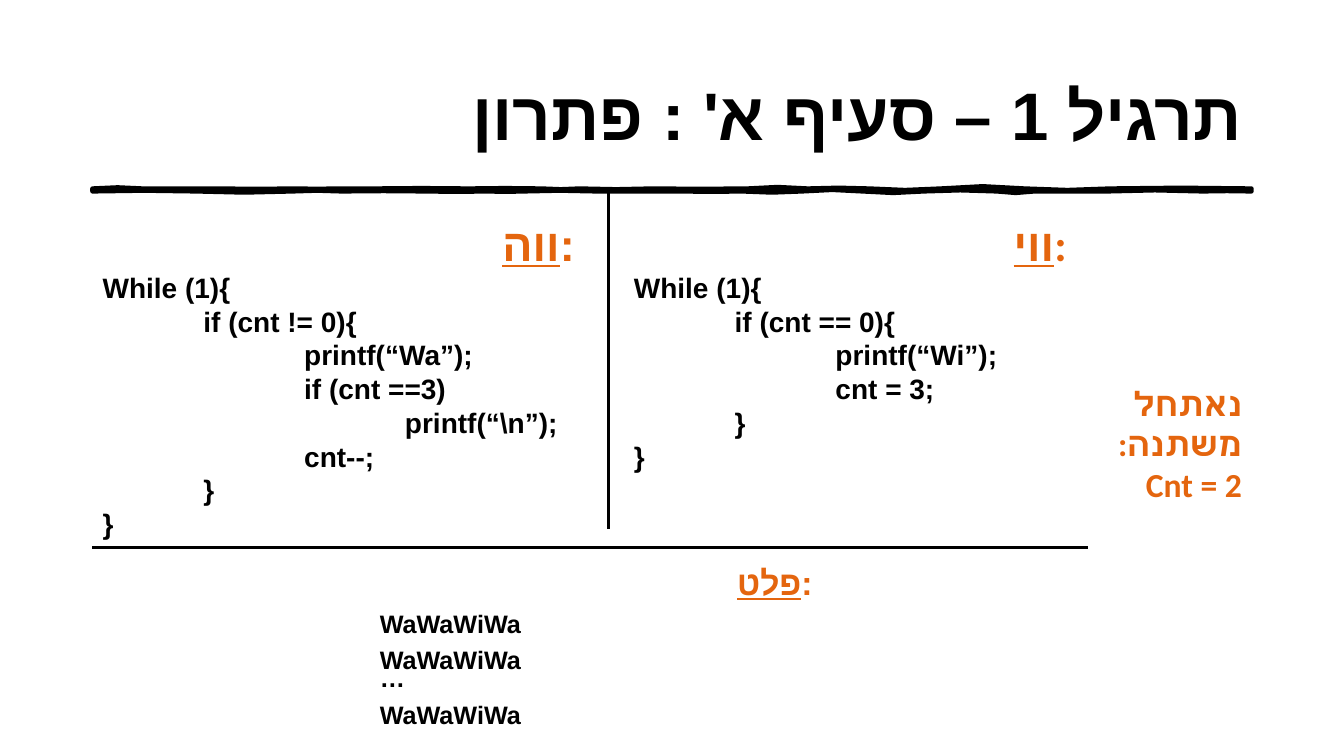
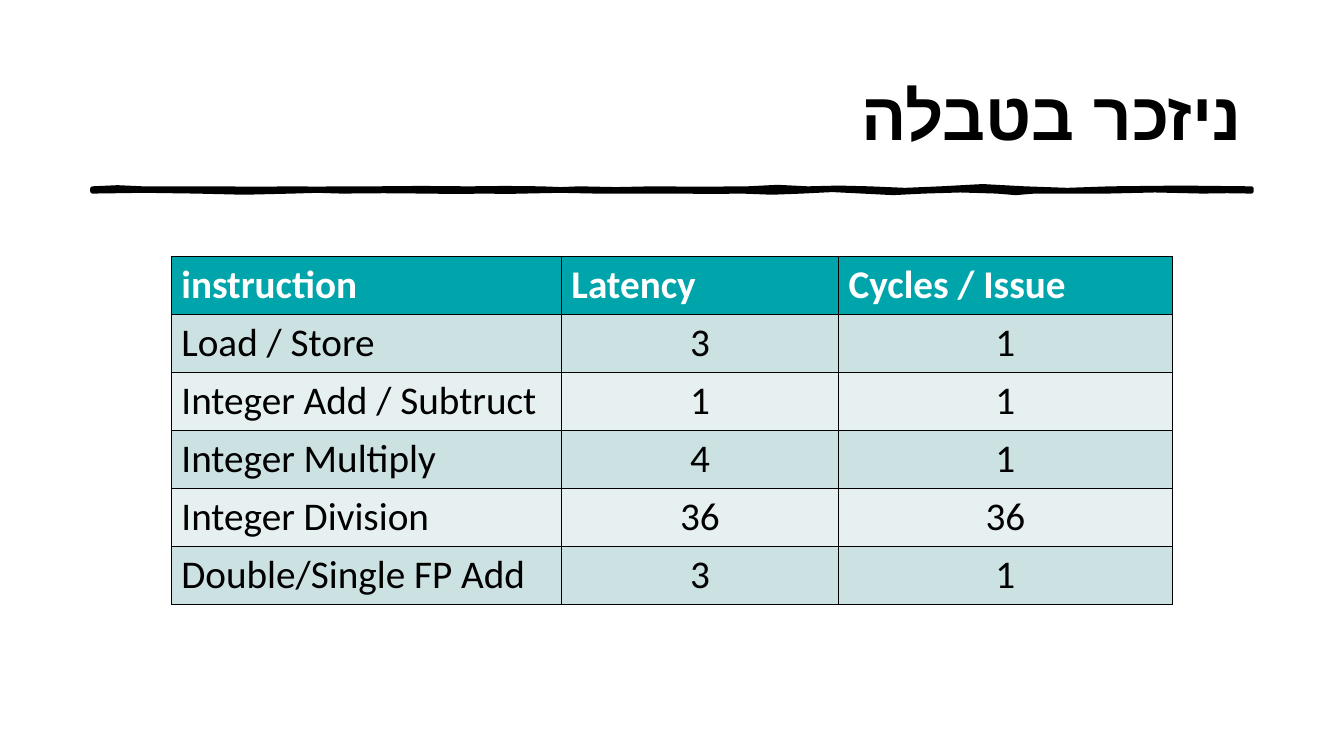
from dataclasses import dataclass
from typing import Any, Iterator

import lxml.etree
import pptx
import pptx.dml.color
import pptx.enum.shapes
import pptx.enum.text
import pptx.oxml.ns
import pptx.util

Pt = pptx.util.Pt
RGBColor = pptx.dml.color.RGBColor
Align = pptx.enum.text.PP_ALIGN
Anchor = pptx.enum.text.MSO_ANCHOR
qn = pptx.oxml.ns.qn

BLACK = RGBColor(0x00, 0x00, 0x00)
WHITE = RGBColor(0xFF, 0xFF, 0xFF)
ORANGE = RGBColor(0xE4, 0x65, 0x0E)
TEAL = RGBColor(0x00, 0xA5, 0xAB)
BANDS = (RGBColor(0xCC, 0xE1, 0xE2), RGBColor(0xE7, 0xF0, 0xF1))

ARIAL = "Arial"
CALIBRI = "Calibri"

TAB = 72
RIPPLE = 0.72
CURVE_STEPS = 2
RULE_LEFT = 66
RULE_TOP = 134.6
RULE_BOTTOM = 136.8
ROW_HEIGHT = 41.4


@dataclass(frozen=True)
class Wave:
    end: float
    first: int
    second: int


@dataclass(frozen=True)
class Box:
    left: float
    top: float
    width: float
    height: float


@dataclass(frozen=True)
class CodePanel:
    box: Box
    heading: str
    heading_font: str
    lines: tuple[tuple[int, str], ...]


@dataclass(frozen=True)
class Divider:
    start: tuple[float, float]
    end: tuple[float, float]


TOP_WAVES = tuple(Wave(*values) for values in (
    (102, -2, -1), (153, 1, -1), (213, 1, 0), (240, 0, 1),
    (267, -1, 1), (335, -1, 0), (387, 0, -1), (414, 1, 1),
    (466, -1, 3), (534, -3, 4), (577, -4, 0), (621, 0, -2),
    (672, 2, 2), (732, -2, -4), (793, 4, 0), (894, 0, -2),
))
BOTTOM_WAVES = tuple(Wave(*values) for values in (
    (859, -1, 0), (791, 0, -3), (739, 3, -3), (712, 3, 1),
    (660, -1, -2), (616, 2, 2), (573, -2, -2), (530, 2, 1),
    (486, -1, 2), (426, -2, 2), (374, -2, 0), (348, 0, 1),
    (304, -1, 2), (244, -2, 1), (209, -1, -1), (140, 1, 2),
    (66, -2, 0),
))

TITLE_BOX = Box(66.2, 28.8, 828, 104.4)
OUTPUT_BOX = Box(264.2, 413.3, 323.3, 113)
NOTE_BOX = Box(771.8, 270, 122.4, 94.3)

CODE_PANELS = (
    CodePanel(Box(66.2, 151.2, 351.4, 239.8), "ווה", ARIAL, (
        (0, "While (1){"),
        (1, "if (cnt != 0){"),
        (2, "printf(“Wa”);"),
        (2, "if (cnt ==3)"),
        (3, "printf(“\\n”);"),
        (2, "cnt--;"),
        (1, "}"),
        (0, "}"),
    )),
    CodePanel(Box(445.7, 151.2, 323.3, 191.5), "ווי", CALIBRI, (
        (0, "While (1){"),
        (1, "if (cnt == 0){"),
        (2, "printf(“Wi”);"),
        (2, "cnt = 3;"),
        (1, "}"),
        (0, "}"),
    )),
)
DIVIDERS = (
    Divider((434.6, 134), (434.6, 378)),
    Divider((65.9, 391), (777.2, 391)),
)
OUTPUT_LINES = (("WaWaWiWa", 13), ("WaWaWiWa", 13), ("…", 0), ("WaWaWiWa", 13))

COLUMN_WIDTHS = (278.6, 198, 238.3)
LATENCY_ROWS = (
    ("instruction", "Latency", "Cycles / Issue"),
    ("Load / Store", "3", "1"),
    ("Integer Add / Subtruct", "1", "1"),
    ("Integer Multiply", "4", "1"),
    ("Integer Division", "36", "36"),
    ("Double/Single FP Add", "3", "1"),
)


def write(frame: Any, text: str, *, size: float, font: str = CALIBRI,
          hebrew_font: str = ARIAL, color: RGBColor = BLACK, bold: bool = True,
          underline: bool = False, suffix: str = "", align: Any = Align.LEFT,
          rtl: bool = False, indent: float = 0,
          line_spacing: float | None = None, space_before: float = 0) -> None:
    paragraph = frame.paragraphs[0]
    if paragraph.runs:
        paragraph = frame.add_paragraph()
    paragraph.alignment = align
    paragraph.space_before = Pt(space_before)
    if line_spacing is not None:
        paragraph.line_spacing = Pt(line_spacing)
    properties = paragraph._p.get_or_add_pPr()
    if indent:
        properties.set("marL", str(Pt(indent)))
    if rtl:
        properties.set("rtl", "1")
    for part, underlined in ((text, underline), (suffix, False)):
        if not part:
            continue
        run = paragraph.add_run()
        run.text = part
        run.font.size = Pt(size)
        run.font.bold = bold
        run.font.underline = underlined
        run.font.color.rgb = color
        run.font.name = font
        complex_font = lxml.etree.SubElement(run._r.get_or_add_rPr(), qn("a:cs"))
        complex_font.set("typeface", hebrew_font)


def add_text_frame(slide: Any, box: Box, anchor: Any = Anchor.TOP) -> Any:
    shape = slide.shapes.add_textbox(
        Pt(box.left), Pt(box.top), Pt(box.width), Pt(box.height))
    frame = shape.text_frame
    frame.word_wrap = True
    frame.vertical_anchor = anchor
    return frame


def wave_points(start: float, base: float,
                waves: tuple[Wave, ...]) -> Iterator[tuple[int, int]]:
    for wave in waves:
        for step in range(1, CURVE_STEPS + 1):
            t = step / CURVE_STEPS
            bend = 3 * t * (1 - t) * ((1 - t) * wave.first + t * wave.second)
            yield Pt(start + (wave.end - start) * t), Pt(base + RIPPLE * bend)
        start = wave.end


def add_title_rule(slide: Any) -> None:
    builder = slide.shapes.build_freeform(Pt(RULE_LEFT), Pt(RULE_TOP))
    right = TOP_WAVES[-1].end
    builder.add_line_segments([
        *wave_points(RULE_LEFT, RULE_TOP, TOP_WAVES),
        (Pt(right), Pt(RULE_BOTTOM)),
        *wave_points(right, RULE_BOTTOM, BOTTOM_WAVES),
    ], close=True)
    shape = builder.convert_to_shape()
    shape.shadow.inherit = False
    shape.fill.solid()
    shape.fill.fore_color.rgb = BLACK
    shape.line.color.rgb = BLACK
    shape.line.width = Pt(3)
    lxml.etree.SubElement(shape.line._get_or_add_ln(), qn("a:round"))


def add_titled_slide(presentation: Any, title: str) -> Any:
    slide = presentation.slides.add_slide(presentation.slide_layouts[6])
    add_title_rule(slide)
    write(add_text_frame(slide, TITLE_BOX, Anchor.MIDDLE), title,
          size=48, align=Align.RIGHT, rtl=True)
    return slide


def add_code_panel(slide: Any, panel: CodePanel) -> None:
    frame = add_text_frame(slide, panel.box)
    write(frame, panel.heading, suffix=":", size=32, font=panel.heading_font,
          color=ORANGE, underline=True, align=Align.RIGHT)
    for level, text in panel.lines:
        write(frame, text, size=20, font=ARIAL, indent=level * TAB,
              line_spacing=24.1)


def add_divider(slide: Any, divider: Divider) -> None:
    connector = slide.shapes.add_connector(
        pptx.enum.shapes.MSO_CONNECTOR.STRAIGHT,
        *map(Pt, divider.start + divider.end))
    connector.line.color.rgb = BLACK
    connector.line.width = Pt(2.25)
    lxml.etree.SubElement(connector._element.spPr, qn("a:effectLst"))


def add_cell_borders(cell: Any) -> None:
    properties = cell._tc.get_or_add_tcPr()
    for position, side in enumerate(("a:lnL", "a:lnR", "a:lnT", "a:lnB")):
        border = lxml.etree.Element(qn(side), w=str(Pt(1)))
        fill = lxml.etree.SubElement(border, qn("a:solidFill"))
        lxml.etree.SubElement(fill, qn("a:srgbClr"), val=str(BLACK))
        properties.insert(position, border)


def add_latency_table(slide: Any) -> None:
    table = slide.shapes.add_table(
        len(LATENCY_ROWS), len(COLUMN_WIDTHS), Pt(122.4), Pt(183.3),
        Pt(sum(COLUMN_WIDTHS)), Pt(ROW_HEIGHT * len(LATENCY_ROWS))).table
    for column, width in zip(table.columns, COLUMN_WIDTHS):
        column.width = Pt(width)
    for row_index, values in enumerate(LATENCY_ROWS):
        table.rows[row_index].height = Pt(ROW_HEIGHT)
        header = row_index == 0
        for column_index, value in enumerate(values):
            cell = table.cell(row_index, column_index)
            cell.fill.solid()
            cell.fill.fore_color.rgb = TEAL if header else BANDS[(row_index - 1) % 2]
            add_cell_borders(cell)
            centred = column_index > 0 and not header
            write(cell.text_frame, value, size=28, bold=header,
                  color=WHITE if header else BLACK,
                  align=Align.CENTER if centred else Align.LEFT)


def add_solution_slide(presentation: Any) -> None:
    slide = add_titled_slide(presentation, "תרגיל 1 – סעיף א' : פתרון")
    for panel in CODE_PANELS:
        add_code_panel(slide, panel)
    for divider in DIVIDERS:
        add_divider(slide, divider)
    output = add_text_frame(slide, OUTPUT_BOX)
    write(output, "פלט", suffix=":", size=24, font=ARIAL, color=ORANGE,
          underline=True, align=Align.RIGHT, line_spacing=13)
    for text, gap in OUTPUT_LINES:
        write(output, text, size=18, font=ARIAL, line_spacing=13, space_before=gap)
    note = add_text_frame(slide, NOTE_BOX)
    for text in ("נאתחל משתנה:", "Cnt = 2"):
        write(note, text, size=24, hebrew_font=CALIBRI, color=ORANGE,
              align=Align.RIGHT, rtl=True)


def main() -> None:
    presentation = pptx.Presentation()
    presentation.slide_width = Pt(960)
    presentation.slide_height = Pt(540)
    add_solution_slide(presentation)
    add_latency_table(add_titled_slide(presentation, "ניזכר בטבלה"))
    presentation.save("out.pptx")


if __name__ == "__main__":
    main()
